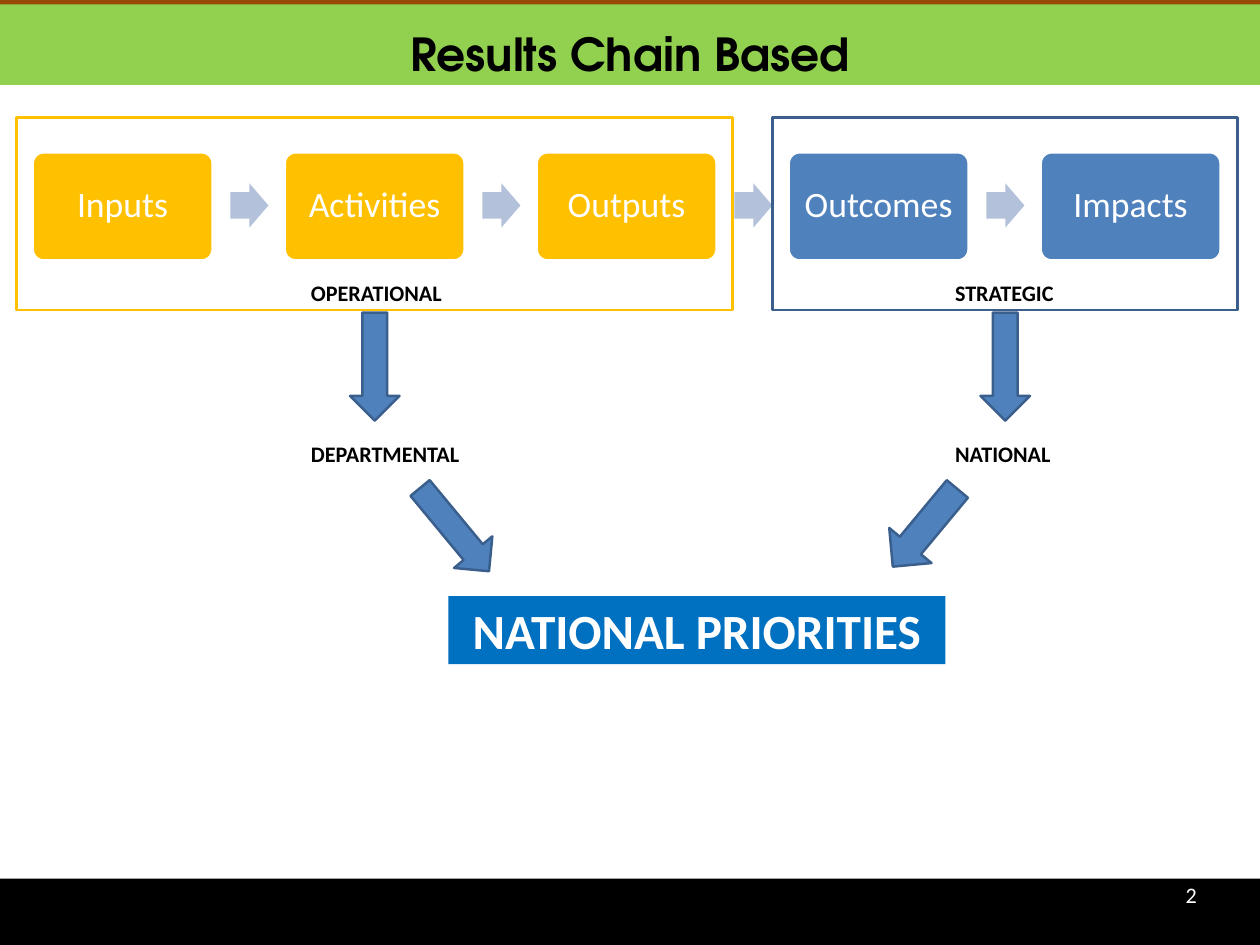
from pptx import Presentation
from pptx.dml.color import RGBColor
from pptx.enum.shapes import MSO_SHAPE
from pptx.enum.text import MSO_ANCHOR, MSO_AUTO_SIZE, PP_ALIGN
from pptx.util import Inches, Pt

RECTANGLE = MSO_SHAPE.RECTANGLE
ROUNDED = MSO_SHAPE.ROUNDED_RECTANGLE
RIGHT_ARROW = MSO_SHAPE.RIGHT_ARROW
DOWN_ARROW = MSO_SHAPE.DOWN_ARROW
LEFT, CENTER = PP_ALIGN.LEFT, PP_ALIGN.CENTER
TOP, MIDDLE = MSO_ANCHOR.TOP, MSO_ANCHOR.MIDDLE

COLORS = {
    "black": "000000", "white": "FFFFFF", "brown": "984807", "green": "92D050",
    "gold": "FFC000", "blue": "4F81BD", "navy": "3A5F8C", "pale": "B3C1DB",
    "bright": "0070C0",
}
BODY_FONT, TITLE_FONT = "Calibri", "TeX Gyre Adventor"

TITLE = "Results Chain Based"
PAGE_NUMBER = "2"
GOAL = "NATIONAL PRIORITIES"
STAGES = [
    ("Inputs", "gold"), ("Activities", "gold"), ("Outputs", "gold"),
    ("Outcomes", "blue"), ("Impacts", "blue"),
]
LEVELS = [
    {"labels": ("OPERATIONAL", "DEPARTMENTAL"), "label_left": 3.41,
     "frame": (0.19, 8.08), "line": "gold",
     "slanted": (4.85, 5.37, 0.56, 1.22), "angle": 320.4},
    {"labels": ("STRATEGIC", "NATIONAL"), "label_left": 10.68,
     "frame": (8.72, 5.25), "line": "navy",
     "slanted": (10.13, 5.39, 0.62, 1.14), "angle": 39.7},
]

WIDTH, HEIGHT = 14.22, 10.67
PITCH = WIDTH / len(STAGES)
CARD_LEFT, CARD_TOP, CARD_WIDTH, CARD_HEIGHT = 0.37, 1.72, 2.03, 1.22
STEP_WIDTH, STEP_HEIGHT, STEP_GAP = 0.43, 0.5, 0.2
FRAME_TOP, FRAME_HEIGHT = 1.33, 2.17
DOWN_WIDTH, DOWN_HEIGHT, DOWN_TOP = 0.56, 1.22, 3.53
LABEL_TOPS = (3.1, 4.92)
FOOTER_HEIGHT, HEADER_HEIGHT, STRIPE = 0.75, 0.96, 0.05


def color(name):
    return RGBColor.from_string(COLORS[name])


def add_block(page, kind, place, fill=None, line=None, weight=2):
    shape = page.shapes.add_shape(kind, *map(Inches, place))
    shape.shadow.inherit = False
    if fill:
        shape.fill.solid()
        shape.fill.fore_color.rgb = color(fill)
    else:
        shape.fill.background()
    if line:
        shape.line.color.rgb = color(line)
        shape.line.width = Pt(weight)
    else:
        shape.line.fill.background()
    return shape


def write(shape, text, size, ink="black", font=BODY_FONT, bold=False, align=LEFT,
          anchor=TOP, wrap=True, insets=(0.1, 0.05, 0.1, 0.05), spacing=None):
    frame = shape.text_frame
    frame.auto_size = MSO_AUTO_SIZE.NONE
    frame.word_wrap = wrap
    frame.vertical_anchor = anchor
    (frame.margin_left, frame.margin_top,
     frame.margin_right, frame.margin_bottom) = map(Inches, insets)
    para = frame.paragraphs[0]
    para.alignment = align
    if spacing:
        para.line_spacing = spacing
    span = para.add_run()
    span.text = text
    span.font.name = font
    span.font.size = Pt(size)
    span.font.bold = bold
    span.font.color.rgb = color(ink)


def add_label(page, text, place, **style):
    write(page.shapes.add_textbox(*map(Inches, place)), text, 18, **style)


def add_header_and_footer(page):
    footer_top = HEIGHT - FOOTER_HEIGHT
    add_block(page, RECTANGLE, (0, footer_top, WIDTH, FOOTER_HEIGHT), "black")
    stripe = add_block(page, RECTANGLE, (0, 0, WIDTH, HEADER_HEIGHT), "brown")
    title = page.shapes.title
    stripe._element.addnext(title._element)
    title.left, title.top, title.width, title.height = map(
        Inches, (0, STRIPE, WIDTH, HEADER_HEIGHT - STRIPE))
    title.fill.solid()
    title.fill.fore_color.rgb = color("green")
    write(title, TITLE, 37, font=TITLE_FONT, bold=True, align=CENTER,
          insets=(0, 0.18, 0, 0), spacing=Pt(49.1))
    add_label(page, PAGE_NUMBER, (13.23, footer_top + 0.03, 0.31, 0.3),
              ink="white", insets=(0.15, 0, 0, 0))


def add_chain(page):
    step_top = CARD_TOP + (CARD_HEIGHT - STEP_HEIGHT) / 2 - 0.01
    for index, (name, fill) in enumerate(STAGES):
        left = CARD_LEFT + index * PITCH
        card = add_block(page, ROUNDED, (left, CARD_TOP, CARD_WIDTH, CARD_HEIGHT),
                         fill, "white")
        card.adjustments[0] = 0.1
        write(card, name, 29, ink="white", align=CENTER, anchor=MIDDLE,
              insets=(0.12,) * 4, spacing=0.9)
        if index < len(STAGES) - 1:
            step_left = left + CARD_WIDTH + STEP_GAP
            step = add_block(page, RIGHT_ARROW,
                             (step_left, step_top, STEP_WIDTH, STEP_HEIGHT), "pale")
            step.adjustments[0] = 0.6
            step.adjustments[1] = 0.5


def add_level(page, level):
    left, width = level["frame"]
    add_block(page, RECTANGLE, (left, FRAME_TOP, width, FRAME_HEIGHT),
              line=level["line"], weight=2.25)
    for text, top in zip(level["labels"], LABEL_TOPS):
        add_label(page, text, (level["label_left"], top, 1.89, 0.4),
                  bold=True, wrap=False)
    arrow_left = left + (width - DOWN_WIDTH) / 2
    add_block(page, DOWN_ARROW, (arrow_left, DOWN_TOP, DOWN_WIDTH, DOWN_HEIGHT),
              "blue", "navy")
    slanted = add_block(page, DOWN_ARROW, level["slanted"], "blue", "navy")
    slanted.rotation = level["angle"]


def main():
    deck = Presentation()
    deck.slide_width, deck.slide_height = Inches(WIDTH), Inches(HEIGHT)
    page = deck.slides.add_slide(deck.slide_layouts[5])
    add_header_and_footer(page)
    add_chain(page)
    for level in LEVELS:
        add_level(page, level)
    goal = add_block(page, RECTANGLE, (5.06, 6.73, 5.61, 0.77), "bright")
    write(goal, GOAL, 40, ink="white", bold=True, align=CENTER)
    deck.save("out.pptx")


if __name__ == "__main__":
    main()
